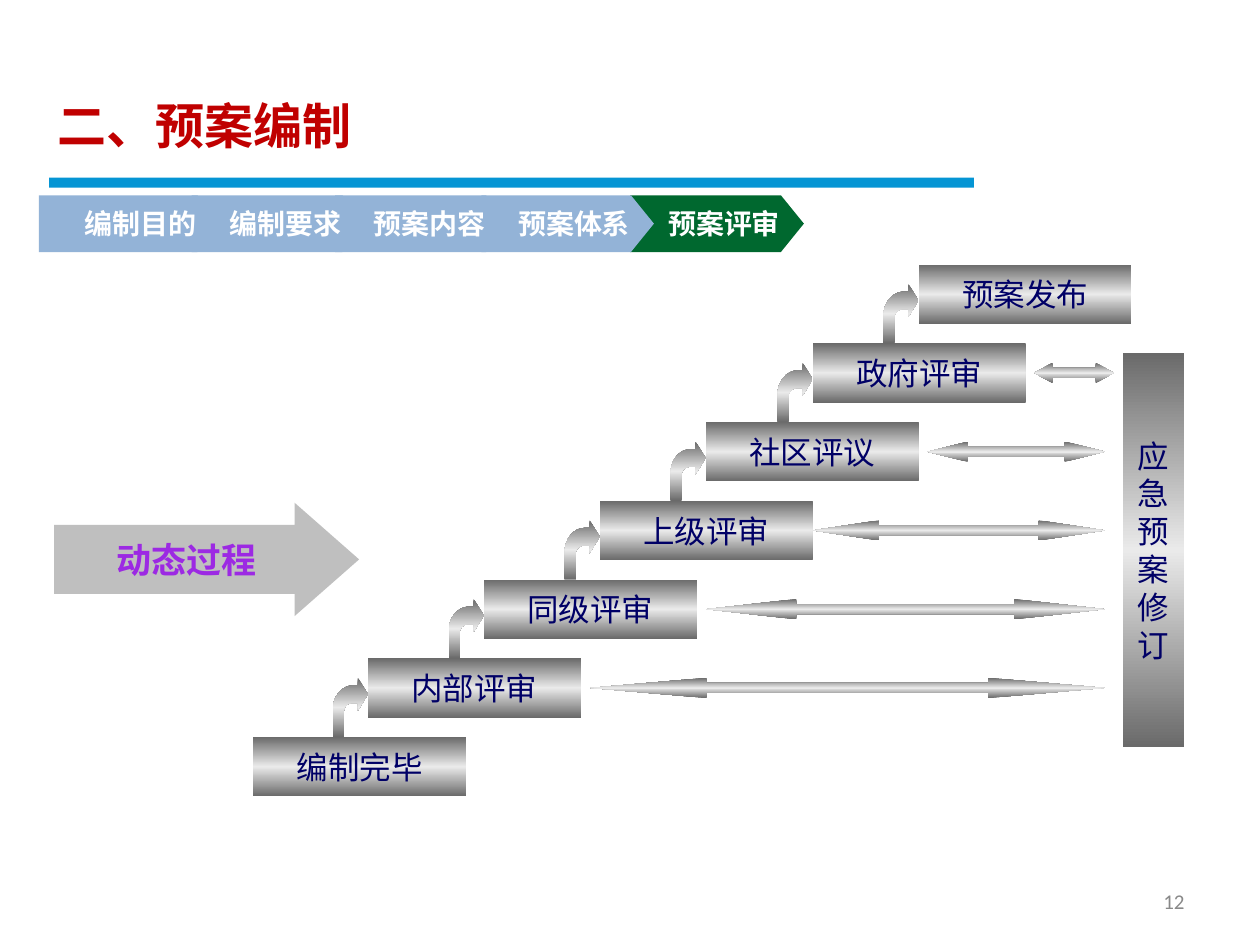
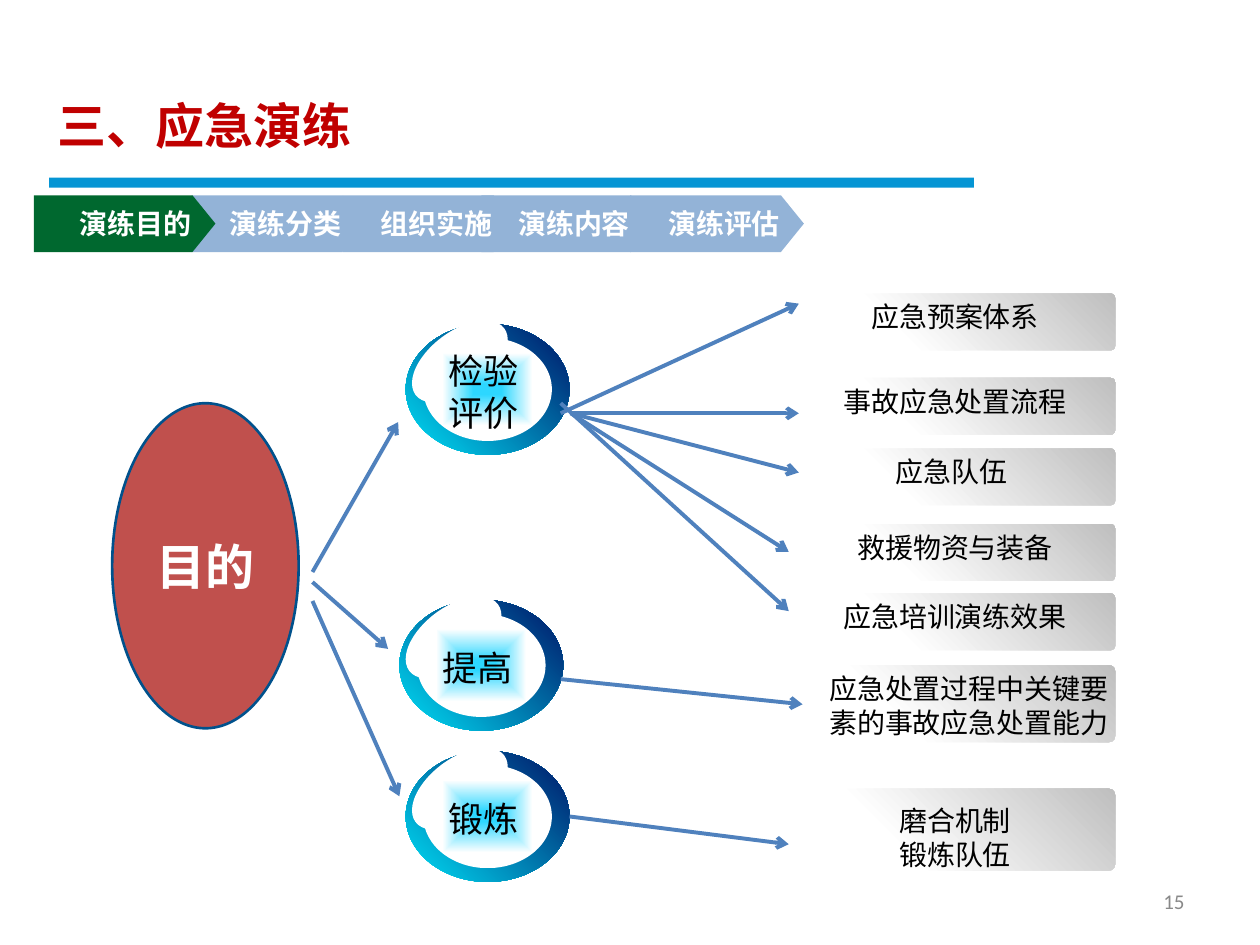
from math import cos, pi, sin

from lxml.etree import SubElement
from pptx import Presentation
from pptx.dml.color import RGBColor
from pptx.enum.shapes import MSO_CONNECTOR, MSO_SHAPE
from pptx.enum.text import MSO_ANCHOR, PP_ALIGN
from pptx.oxml.ns import qn
from pptx.util import Inches, Pt

# Shared style
CJK = "Noto Sans CJK SC"
WHITE, BLACK, RED, NAVY = "FFFFFF", "000000", "C00000", "000066"
BAND, TAB, ACTIVE_TAB = "0595D4", "93B3D7", "00682F"
ARROW_BLUE, BRICK = "4F81BD", "C0504D"

# Gradients: stops of (percent, colour) and an angle, or None for a centred glow
STEEL = ([(0, "6A6A6A"), (50, "EAEAEA"), (100, "6A6A6A")], 90)
RING = ([(0, "00DFF6"), (90, "002774"), (100, "002774")], 315)
GLOW = ([(0, "2DD7FF"), (10, "2DD7FF"), (70, WHITE), (100, WHITE)], None)
MIST = ([(0, WHITE), (30, WHITE), (100, "BFBFBF")], 315)


def color(value):
    return RGBColor.from_string(value)


class Deck:
    def __init__(self):
        self.prs = Presentation()
        self.prs.slide_width, self.prs.slide_height = Inches(10), Inches(7.5)
        self.slide = None

    def new_slide(self, title, number):
        self.slide = self.prs.slides.add_slide(self.prs.slide_layouts[6])
        self.shape(MSO_SHAPE.RECTANGLE, 0.39, 1.41, 7.34, 0.08, BAND)
        self.label(0.36, 0.6, 2.83, 0.79, [title], 28, RED, bold=True,
                   align=PP_ALIGN.LEFT)
        self.label(7.17, 6.95, 2.33, 0.4, [number], 12, "898989",
                   font="Calibri", align=PP_ALIGN.RIGHT)

    def paint(self, shape, fill, line=None):
        shape.shadow.inherit = False
        if isinstance(fill, str):
            shape.fill.solid()
            shape.fill.fore_color.rgb = color(fill)
        else:
            self.gradient(shape, *fill)
        if line:
            shape.line.color.rgb = color(line)
            shape.line.width = Pt(1.5)
        else:
            shape.line.fill.background()

    def gradient(self, shape, stops, angle):
        shape.fill.gradient()
        grad = shape._element.spPr.find(qn("a:gradFill"))
        for child in list(grad):
            grad.remove(child)
        stop_list = SubElement(grad, qn("a:gsLst"))
        for percent, value in stops:
            stop = SubElement(stop_list, qn("a:gs"), pos=str(percent * 1000))
            SubElement(stop, qn("a:srgbClr"), val=value)
        if angle is None:
            glow = SubElement(grad, qn("a:path"), {"path": "rect"})
            SubElement(glow, qn("a:fillToRect"),
                       {side: "50000" for side in "ltrb"})
        else:
            SubElement(grad, qn("a:lin"), ang=str(angle * 60000), scaled="0")

    def shape(self, kind, x, y, w, h, fill, line=None, adjust=(), rotation=0):
        shape = self.slide.shapes.add_shape(
            kind, Inches(x), Inches(y), Inches(w), Inches(h))
        for index, value in enumerate(adjust):
            shape.adjustments[index] = value
        shape.rotation = rotation
        self.paint(shape, fill, line)
        return shape

    def outline(self, points, fill):
        corners = [(Inches(x), Inches(y)) for x, y in points]
        builder = self.slide.shapes.build_freeform(*corners[0], scale=1.0)
        builder.add_line_segments(corners[1:], close=True)
        self.paint(builder.convert_to_shape(), fill)

    def add_text(self, shape, lines, size, ink, font=CJK, bold=False,
                 align=PP_ALIGN.CENTER, anchor=MSO_ANCHOR.MIDDLE, wrap=True):
        frame = shape.text_frame
        frame.word_wrap = wrap
        frame.vertical_anchor = anchor
        for index, line in enumerate(lines):
            paragraph = frame.add_paragraph() if index else frame.paragraphs[0]
            paragraph.alignment = align
            run = paragraph.add_run()
            run.text = line
            run.font.size, run.font.bold = Pt(size), bold
            run.font.color.rgb = color(ink)
            run.font.name = font
            SubElement(run.font._element, qn("a:ea"), typeface=CJK)

    def label(self, x, y, w, h, lines, size, ink, **style):
        box = self.slide.shapes.add_textbox(
            Inches(x), Inches(y), Inches(w), Inches(h))
        self.add_text(box, lines, size, ink, **style)

    def arrow(self, start, end):
        link = self.slide.shapes.add_connector(
            MSO_CONNECTOR.STRAIGHT, *map(Inches, start + end))
        link.line.color.rgb = color(ARROW_BLUE)
        link.line.width = Pt(2.25)
        properties = link._element.spPr
        SubElement(properties.find(qn("a:ln")), qn("a:tailEnd"), type="arrow")
        SubElement(properties, qn("a:effectLst"))

    def tabs(self, names, lefts, active):
        widths = (1.44, 1.38, 1.38, 1.37, 1.38)
        # From right to left, so that each tip lies over the next tab
        for name, x, w in reversed(list(zip(names, lefts, widths))):
            tab = self.shape(MSO_SHAPE.PENTAGON, x, 1.55, w, 0.45,
                             ACTIVE_TAB if name == active else TAB,
                             adjust=[0.405])
            self.add_text(tab, [name], 16, WHITE, bold=True,
                          align=PP_ALIGN.RIGHT, wrap=False)

    def steel_box(self, x, y, w, h, lines):
        box = self.shape(MSO_SHAPE.RECTANGLE, x, y, w, h, STEEL)
        self.add_text(box, lines, 18, NAVY, font="Arial", wrap=False)

    def step_arrow(self, x, y):
        """Bent arrow rising from (x, y + 0.47) to its tip at the right."""
        quarter = [pi / 2 * i / 8 for i in range(9)]
        outer = [(0.16 - 0.16 * sin(a), 0.26 - 0.2 * cos(a)) for a in quarter]
        inner = [(0.16 - 0.07 * cos(a), 0.26 - 0.06 * sin(a)) for a in quarter]
        points = [(0.28, 0.13), (0.2, 0), (0.2, 0.06), *outer,
                  (0, 0.47), (0.09, 0.47), *inner, (0.2, 0.2), (0.2, 0.26)]
        self.outline([(x + dx, y + dy) for dx, dy in points], STEEL)

    def goal_ring(self, x, y, lines):
        self.shape(MSO_SHAPE.OVAL, x, y, 1.3, 1.04, RING)
        self.shape(MSO_SHAPE.OVAL, x - 0.01, y + 0.06, 0.88, 0.48, WHITE,
                   rotation=323.1)
        self.shape(MSO_SHAPE.OVAL, x + 0.14, y + 0.11, 1.02, 0.82, GLOW)
        self.label(x - 0.19, y + 0.15, 1.62, 0.77, lines, 20, BLACK)


def review_slide(deck):
    deck.new_slide("二、预案编制", "12")

    # Staircase of review steps, from the top down
    steps = [("预案发布", 7.29), ("政府评审", 6.45), ("社区评议", 5.6),
             ("上级评审", 4.76), ("同级评审", 3.84), ("内部评审", 2.92),
             ("编制完毕", 2.01)]
    tops = [2.1 + 0.625 * i for i in range(len(steps))]
    for (step, x), y in zip(steps, tops):
        deck.steel_box(x, y, 1.69, 0.47, [step])
    for (_, x), y in zip(steps[:-1], tops):
        deck.step_arrow(x - 0.28, y + 0.155)

    # Revision column and the arrows that link it to the reviews
    deck.steel_box(8.91, 2.8, 0.49, 3.13, "应急预案修订")
    spans = [(8.21, 8.84), (7.36, 8.77), (6.45, 8.77), (5.6, 8.77),
             (4.68, 8.77)]
    for (left, right), y in zip(spans, tops[1:]):
        length = right - left
        deck.shape(MSO_SHAPE.LEFT_RIGHT_ARROW, left, y + 0.155, length, 0.16,
                   STEEL, adjust=[0.5, 0.227 * length / 0.16])

    # Process arrow
    process = deck.shape(MSO_SHAPE.RIGHT_ARROW, 0.43, 3.99, 2.42, 0.9,
                         "BFBFBF", adjust=[0.609, 0.569])
    deck.add_text(process, ["动态过程"], 20, "9C29E3", bold=True)

    deck.tabs(["编制目的", "编制要求", "预案内容", "预案体系", "预案评审"],
              [0.31, 1.52, 2.66, 3.82, 5], "预案评审")


def drill_slide(deck):
    deck.new_slide("三、应急演练", "15")

    # Goals
    deck.goal_ring(3.22, 2.57, ["检验", "评价"])
    deck.goal_ring(3.17, 4.76, ["提高"])
    deck.goal_ring(3.22, 5.96, ["锻炼"])

    # Outcomes: top, height, label left, label top, lines
    outcomes = [
        (2.33, 0.45, 6.34, 2.33, ["应急预案体系"]),
        (3, 0.45, 6.34, 3, ["事故应急处置流程"]),
        (3.56, 0.45, 6.31, 3.56, ["应急队伍"]),
        (4.16, 0.45, 6.34, 4.16, ["救援物资与装备"]),
        (4.71, 0.45, 6.34, 4.71, ["应急培训演练效果"]),
        (5.28, 0.61, 6.45, 5.28, ["应急处置过程中关键要素的事故应急处置能力"]),
        (6.26, 0.65, 6.34, 6.33, ["磨合机制", "锻炼队伍"]),
    ]
    for top, height, label_left, label_top, lines in outcomes:
        deck.shape(MSO_SHAPE.ROUNDED_RECTANGLE, 6.37, top, 2.48, height, MIST,
                   adjust=[0.078])
        deck.label(label_left, label_top, 2.48, height, lines, 16, BLACK,
                   anchor=MSO_ANCHOR.TOP)

    # Purpose
    purpose = deck.shape(MSO_SHAPE.OVAL, 0.89, 3.2, 1.48, 2.58, BRICK,
                         line="00518C")
    deck.add_text(purpose, ["目的"], 28, WHITE, font="Arial", bold=True)

    deck.tabs(["演练目的", "演练分类", "组织实施", "演练内容", "演练评估"],
              [0.27, 1.52, 2.72, 3.82, 5], "演练目的")

    # Arrows from the purpose to the goals, then from the goals to the outcomes
    for start, end in [
        ((2.48, 4.54), (3.16, 3.35)), ((2.48, 4.62), (3.08, 5.15)),
        ((2.48, 4.77), (3.17, 6.32)), ((4.45, 5.39), (6.37, 5.59)),
        ((4.52, 6.48), (6.26, 6.7)), ((4.45, 3.2), (6.26, 4.85)),
        ((4.45, 3.28), (6.34, 2.41)), ((4.53, 3.28), (6.26, 4.38)),
        ((4.53, 3.28), (6.34, 3.75)), ((4.53, 3.28), (6.34, 3.28)),
    ]:
        deck.arrow(start, end)


def main():
    deck = Deck()
    review_slide(deck)
    drill_slide(deck)
    deck.prs.save("out.pptx")


if __name__ == "__main__":
    main()
